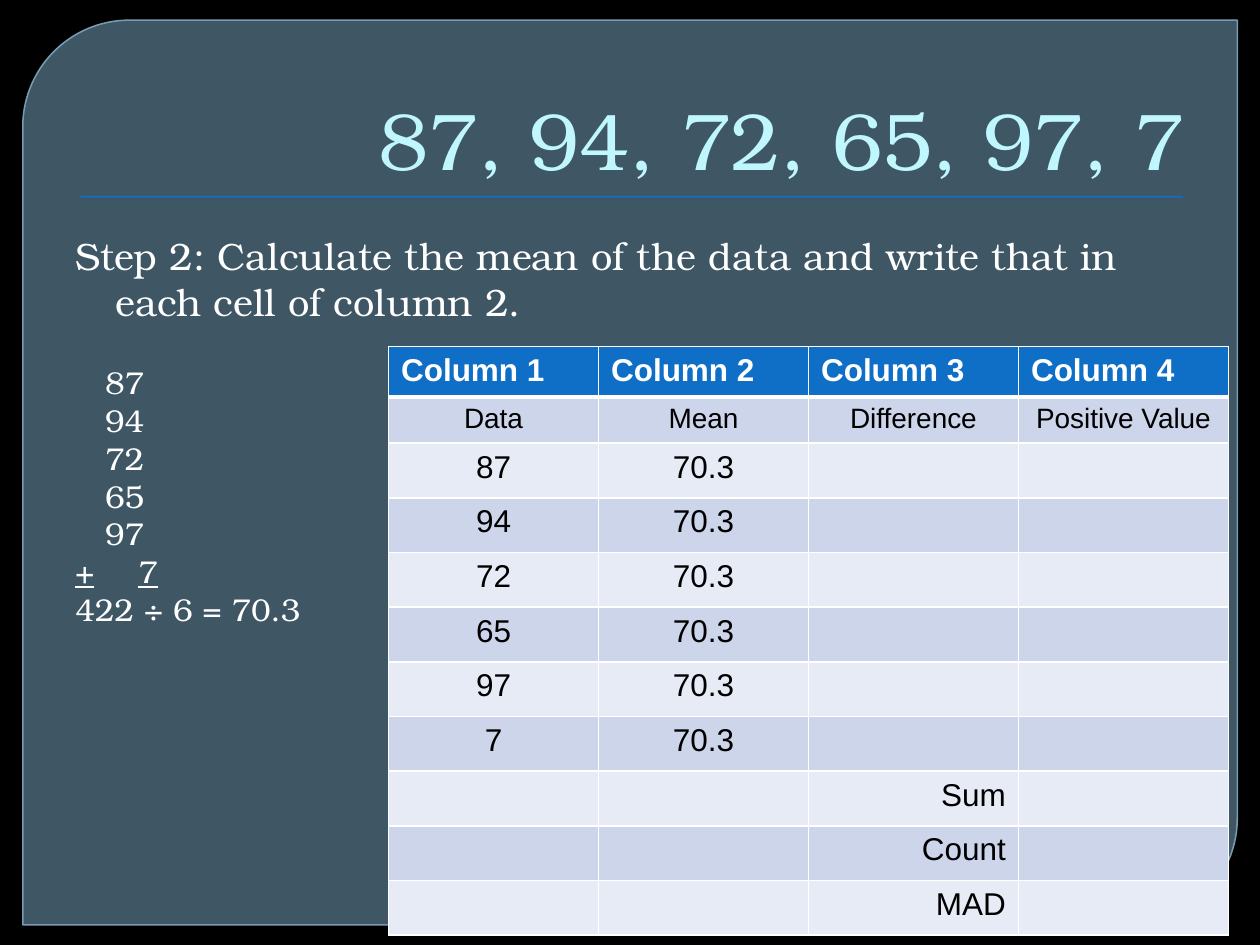
"""Build the slide on step 2 of the mean absolute deviation: the mean of the data."""
import pptx
import pptx.util
import pptx.dml.color
import pptx.enum.shapes
import pptx.enum.text
import pptx.oxml
from lxml import etree

Pt = pptx.util.Pt
ALIGN = pptx.enum.text.PP_ALIGN
SHAPE = pptx.enum.shapes.MSO_SHAPE
SERIF, SANS = "TeX Gyre Bonum", "Arial"
NS = "http://schemas.openxmlformats.org/drawingml/2006/main"

DATA = ["87", "94", "72", "65", "97", "7"]
MEAN = "70.3"
TITLE = ", ".join(DATA)
STEP = "Step 2: Calculate the mean of the data and write that in each cell of column 2."
ADDITION = DATA[:-1] + ["+\t7", "422 ÷ 6 = 70.3"]
ROWS = (
    [["Column 1", "Column 2", "Column 3", "Column 4"],
     ["Data", "Mean", "Difference", "Positive Value"]]
    + [[value, MEAN, "", ""] for value in DATA]
    + [["", "", label, ""] for label in ("Sum", "Count", "MAD")]
)
HEIGHTS = [28.8, 25.2] + [31.25] * (len(ROWS) - 2)
COLUMN_WIDTH = 120
BANDS = ["E7EBF5", "CCD5EA"]


def rgb(color):
    return pptx.dml.color.RGBColor.from_string(color)


def paint(fill, color):
    fill.solid()
    fill.fore_color.rgb = rgb(color)


def set_alpha(props, percent):
    for color in props.iter(f"{{{NS}}}srgbClr"):
        etree.SubElement(color, f"{{{NS}}}alpha", val=str(percent * 1000))


def style(p, size, color, font, align=ALIGN.LEFT, bold=False):
    p.alignment = align
    for f in [r.font for r in p.runs] or [p.font]:
        f.size, f.name, f.bold = Pt(size), font, bold
        f.color.rgb = rgb(color)


def add_block(s, color, kind, *box):
    sp = s.shapes.add_shape(kind, *map(Pt, box))
    sp.shadow.inherit = False
    paint(sp.fill, color)
    sp.line.fill.background()
    return sp


def add_text(s, box, lines, size, color, align=ALIGN.LEFT):
    tf = s.shapes.add_textbox(*map(Pt, box)).text_frame
    tf.word_wrap = True
    tf.text = "\n".join(lines)
    for p in tf.paragraphs:
        style(p, size, color, SERIF, align)
    return tf


def indent(p, margin, first=0):
    props = p._p.get_or_add_pPr()
    props.set("marL", str(Pt(margin)))
    props.set("indent", str(Pt(first)))
    return props


def add_borders(cell, widths):
    props = cell._tc.get_or_add_tcPr()
    for side, width in widths.items():
        props.append(pptx.oxml.parse_xml(
            f'<a:ln{side} xmlns:a="{NS}" w="{Pt(width)}"><a:solidFill>'
            f'<a:srgbClr val="FFFFFF"/></a:solidFill></a:ln{side}>'))


def add_mean_table(s, left, top):
    columns = len(ROWS[0])
    table = s.shapes.add_table(len(ROWS), columns, Pt(left), Pt(top),
                               Pt(COLUMN_WIDTH * columns), Pt(sum(HEIGHTS))).table
    for column in table.columns:
        column.width = Pt(COLUMN_WIDTH)
    for i, (texts, height) in enumerate(zip(ROWS, HEIGHTS)):
        table.rows[i].height = Pt(height)
        header = i == 0
        for j, text in enumerate(texts):
            cell = table.cell(i, j)
            add_borders(cell, {"L": 1, "R": 1, "T": 3 if i == 1 else 1, "B": 3 if header else 1})
            paint(cell.fill, "0F6FC6" if header else BANDS[i % 2])
            cell.text = text
            align = ALIGN.LEFT if header else ALIGN.RIGHT if i > 1 and j == 2 else ALIGN.CENTER
            style(cell.text_frame.paragraphs[0], 16 if i == 1 else 18,
                  "FFFFFF" if header else "000000", SANS, align, header)


def main():
    prs = pptx.Presentation()
    prs.slide_width, prs.slide_height = Pt(720), Pt(540)
    s = prs.slides.add_slide(prs.slide_layouts[6])
    paint(s.background.fill, "000000")

    panel = add_block(s, "61869C", SHAPE.ROUND_2_DIAG_RECTANGLE, 13, 11.5, 694, 517)
    panel.adjustments[0], panel.adjustments[1] = 0.118, 0
    set_alpha(panel._element.spPr, 65)
    panel.line.color.rgb = rgb("779BB2")
    panel.line.width = Pt(0.87)
    add_block(s, "0F6FC6", SHAPE.RECTANGLE, 46, 112, 630, 1)

    title = add_text(s, (36, 20, 648, 90), [TITLE], 46, "C0F7FF", ALIGN.RIGHT)
    title.vertical_anchor = pptx.enum.text.MSO_ANCHOR.BOTTOM
    step = add_text(s, (36, 129.6, 654, 50.4), [STEP], 21.7, "FFFFFF")
    indent(step.paragraphs[0], 23, -23)

    add_mean_table(s, 222, 198)

    addition = add_text(s, (36, 204, 156, 160), ADDITION, 18, "FFFFFF")
    *addends, last, result = addition.paragraphs
    for p in addends:
        indent(p, 17)
    tabs = etree.SubElement(indent(last, 0), f"{{{NS}}}tabLst")
    etree.SubElement(tabs, f"{{{NS}}}tab", pos=str(Pt(22)), algn="l")
    last.runs[0].font.underline = True

    prs.save("out.pptx")


if __name__ == "__main__":
    main()
